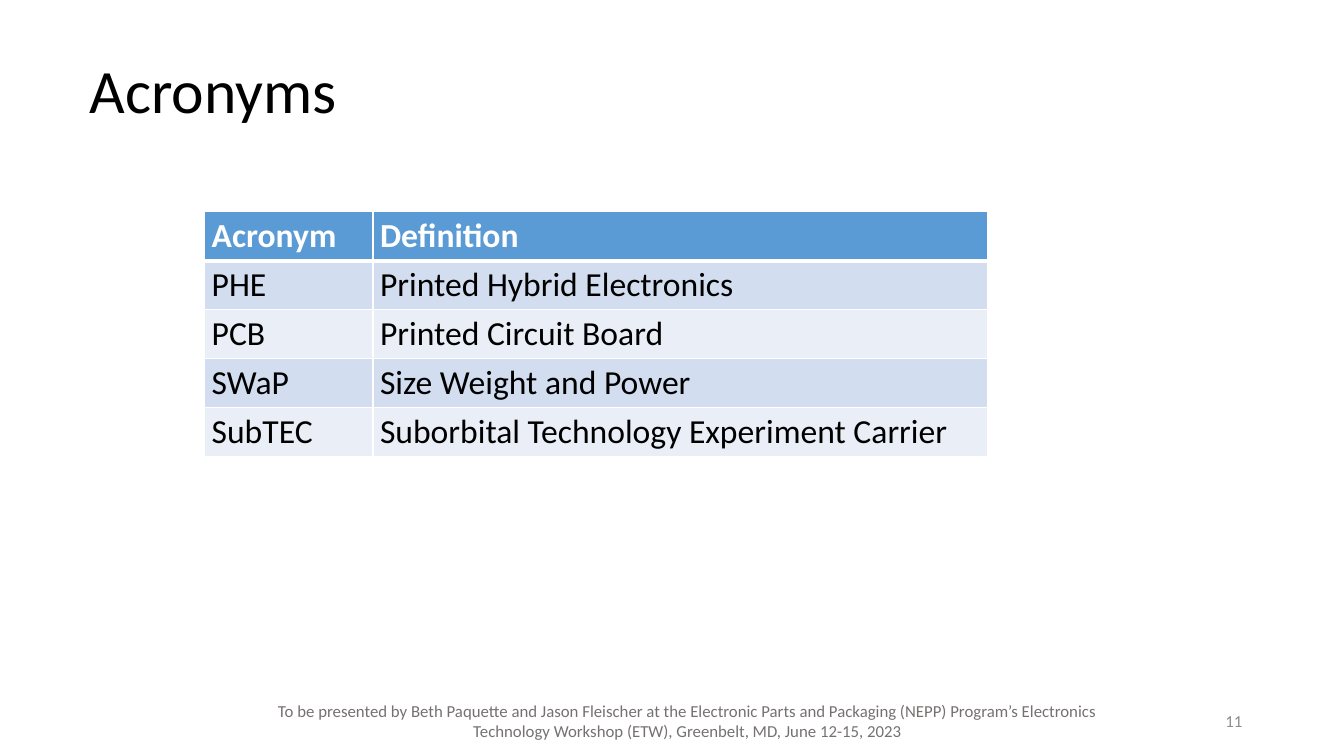
from lxml.etree import SubElement
from pptx import Presentation
from pptx.dml.color import RGBColor
from pptx.enum.text import MSO_ANCHOR, PP_ALIGN
from pptx.oxml.ns import qn
from pptx.util import Inches, Pt

BLACK = RGBColor(0x00, 0x00, 0x00)
WHITE = RGBColor(0xFF, 0xFF, 0xFF)
BLUE = RGBColor(0x5B, 0x9B, 0xD5)
BANDS = [RGBColor(0xD2, 0xDE, 0xEF), RGBColor(0xEA, 0xEF, 0xF7)]
GRAY = RGBColor(0x76, 0x71, 0x71)
PALE = RGBColor(0x8C, 0x8C, 0x8C)
FONT = "Calibri"

ROWS = [
    ("Acronym", "Definition"),
    ("PHE", "Printed Hybrid Electronics"),
    ("PCB", "Printed Circuit Board"),
    ("SWaP", "Size Weight and Power"),
    ("SubTEC", "Suborbital Technology Experiment Carrier"),
]
WIDTHS = [1.67, 6.1]
HEIGHT = 0.48
NOTICE = (
    "To be presented by Beth Paquette and Jason Fleischer at the Electronic "
    "Parts and Packaging (NEPP) Program’s Electronics Technology Workshop "
    "(ETW), Greenbelt, MD, June 12-15, 2023"
)


def add_run(para, text, size, color, bold=False):
    run = para.add_run()
    run.text = text
    run.font.name = FONT
    run.font.size = Pt(size)
    run.font.bold = bold
    run.font.color.rgb = color


def set_title(slide, text):
    title = slide.shapes.title
    title.left, title.top = Inches(0.79), Inches(0.2)
    title.width, title.height = Inches(10.24), Inches(1.45)
    title.text_frame.vertical_anchor = MSO_ANCHOR.MIDDLE
    para = title.text_frame.paragraphs[0]
    para.alignment = PP_ALIGN.LEFT
    para.line_spacing = 0.9
    add_run(para, text, 44, BLACK)


def add_foot(slide, text, left, width, align, color):
    box = slide.shapes.add_textbox(
        Inches(left), Inches(6.95), Inches(width), Inches(0.4))
    frame = box.text_frame
    frame.word_wrap = True
    frame.vertical_anchor = MSO_ANCHOR.MIDDLE
    para = frame.paragraphs[0]
    para.alignment = align
    add_run(para, text, 12, color)


def add_edge(cell, side, width):
    props = cell._tc.get_or_add_tcPr()
    line = SubElement(props, qn(f"a:ln{side}"), w=str(Pt(width)))
    fill = SubElement(line, qn("a:solidFill"))
    SubElement(fill, qn("a:srgbClr"), val=str(WHITE))


def fill_cell(cell, text, row):
    head = row == 0
    cell.margin_left = cell.margin_right = Inches(0.07)
    cell.margin_top = cell.margin_bottom = Inches(0.04)
    for side in "LRTB":
        thick = (head and side == "B") or (row == 1 and side == "T")
        add_edge(cell, side, 3 if thick else 1)
    cell.fill.solid()
    cell.fill.fore_color.rgb = BLUE if head else BANDS[(row - 1) % 2]
    para = cell.text_frame.paragraphs[0]
    add_run(para, text, 24, WHITE if head else BLACK, head)


def add_grid(slide):
    table = slide.shapes.add_table(
        len(ROWS), len(WIDTHS), Inches(2.03), Inches(2.1),
        Inches(sum(WIDTHS)), Inches(HEIGHT * len(ROWS))).table
    for col, width in zip(table.columns, WIDTHS):
        col.width = Inches(width)
    for row, texts in enumerate(ROWS):
        table.rows[row].height = Inches(HEIGHT)
        for col, text in enumerate(texts):
            fill_cell(table.cell(row, col), text, row)


def main():
    deck = Presentation()
    deck.slide_width, deck.slide_height = Inches(13.33), Inches(7.5)
    slide = deck.slides.add_slide(deck.slide_layouts[5])
    set_title(slide, "Acronyms")
    add_grid(slide)
    add_foot(slide, NOTICE, 2.54, 8.56, PP_ALIGN.CENTER, GRAY)
    add_foot(slide, "11", 11.42, 1, PP_ALIGN.RIGHT, PALE)
    deck.save("out.pptx")


if __name__ == "__main__":
    main()
